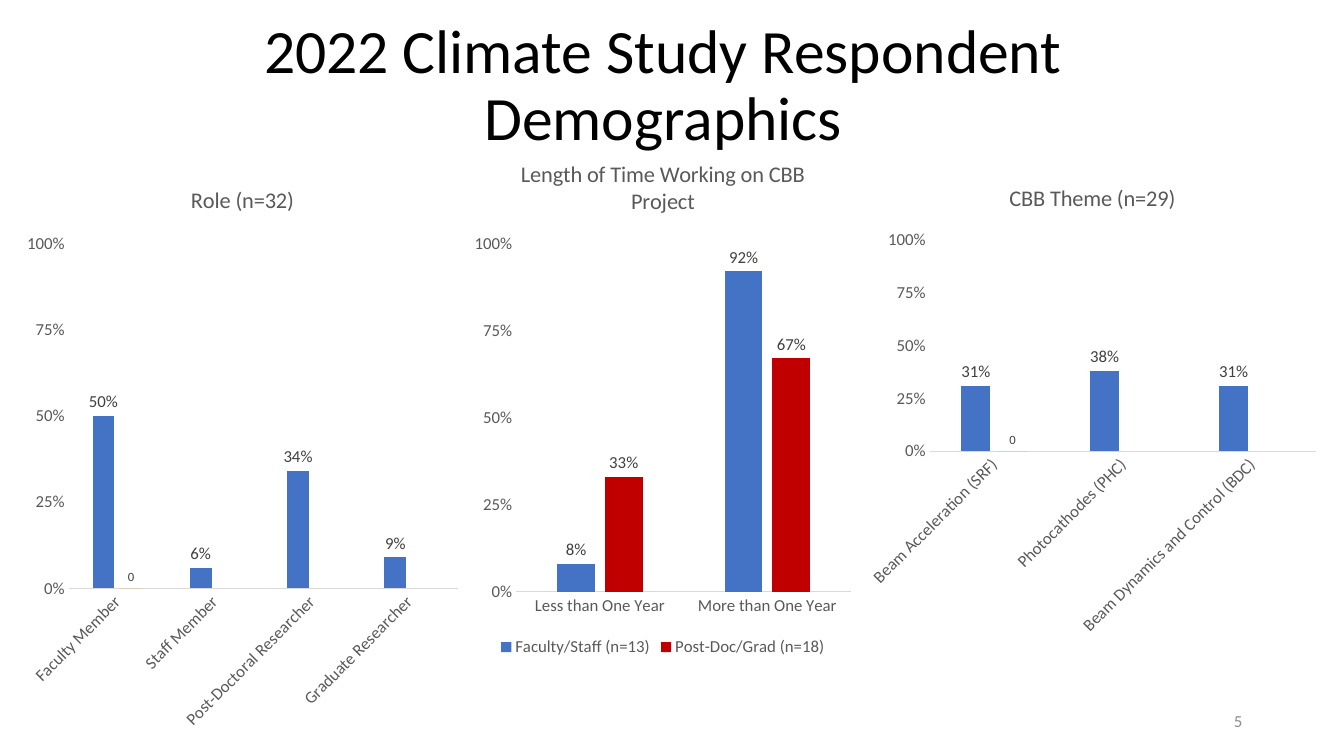
import pptx
import pptx.chart.data
import pptx.dml.color
import pptx.enum.chart
import pptx.enum.text
import pptx.util
from pptx.util import Inches

RGBColor = pptx.dml.color.RGBColor
BLACK = RGBColor(0x00, 0x00, 0x00)
DARK_GRAY = RGBColor(0x40, 0x40, 0x40)
GRAY = RGBColor(0x59, 0x59, 0x59)
NUMBER_GRAY = RGBColor(0x8C, 0x8C, 0x8C)
LINE_GRAY = RGBColor(0xD9, 0xD9, 0xD9)
BLUE = RGBColor(0x44, 0x72, 0xC4)
ORANGE = RGBColor(0xED, 0x7D, 0x31)
RED = RGBColor(0xC0, 0x00, 0x00)

ALIGN = pptx.enum.text.PP_ALIGN
CHART = pptx.enum.chart


def format_font(font, size, color):
    values = {"name": "Calibri", "size": pptx.util.Pt(size), "bold": False}
    for attribute, value in values.items():
        setattr(font, attribute, value)
    font.color.rgb = color


presentation = pptx.Presentation()
presentation.slide_width = Inches(13.33)
presentation.slide_height = Inches(7.5)
slide = presentation.slides.add_slide(presentation.slide_layouts[6])

# Title and slide number
texts = [
    ("2022 Climate Study Respondent Demographics",
     (0.83, 0.14, 11.5, 1.45), ALIGN.CENTER, 0.9, 44, BLACK),
    ("5", (9.42, 6.95, 3, 0.4), ALIGN.RIGHT, 1.0, 12, NUMBER_GRAY),
]
for text, place, alignment, spacing, size, color in texts:
    shape = slide.shapes.add_textbox(*map(Inches, place))
    shape.text_frame.word_wrap = True
    shape.text_frame.vertical_anchor = pptx.enum.text.MSO_ANCHOR.MIDDLE
    paragraph = shape.text_frame.paragraphs[0]
    paragraph.text = text
    paragraph.alignment = alignment
    paragraph.line_spacing = spacing
    format_font(paragraph.runs[0].font, size, color)

# Chart contents; each series has name, values, colour, label size, label format
charts = [
    {"title": "Role (n=32)", "place": (0.18, 1.63, 4.45, 5.72),
     "categories": ["Faculty Member", "Staff Member",
                    "Post-Doctoral Researcher", "Graduate Researcher"],
     "series": [("Series 1", [0.5, 0.06, 0.34, 0.09], BLUE, 12, "0%"),
                ("Series 2", [0, None, None, None], ORANGE, 9, "General")],
     "slanted": True, "legend": False},
    {"title": "CBB Theme (n=29)", "place": (8.52, 1.63, 4.63, 4.77),
     "categories": ["Beam Acceleration (SRF)", "Photocathodes (PHC)",
                    "Beam Dynamics and Control (BDC)"],
     "series": [("Series 1", [0.31, 0.38, 0.31], BLUE, 12, "0%"),
                ("Series 2", [0, None, None], ORANGE, 9, "General")],
     "slanted": True, "legend": False},
    {"title": "Length of Time Working on CBB Project",
     "place": (4.63, 1.38, 3.89, 5.18),
     "categories": ["Less than One Year", "More than One Year"],
     "series": [("Faculty/Staff (n=13)", [0.08, 0.92], BLUE, 12, "0%"),
                ("Post-Doc/Grad (n=18)", [0.33, 0.67], RED, 12, "0%")],
     "slanted": False, "legend": True},
]

for content in charts:
    data = pptx.chart.data.CategoryChartData()
    data.categories = content["categories"]
    for name, values, color, size, number_format in content["series"]:
        data.add_series(name, values, number_format)
    chart = slide.shapes.add_chart(
        CHART.XL_CHART_TYPE.COLUMN_CLUSTERED,
        *map(Inches, content["place"]), data).chart
    format_font(chart.font, 10, BLACK)

    # Chart title and legend
    chart.has_title = True
    chart.chart_title.include_in_layout = False
    title = chart.chart_title.text_frame.paragraphs[0]
    title.text = content["title"]
    format_font(title.runs[0].font, 16, GRAY)
    chart.has_legend = content["legend"]
    if chart.has_legend:
        chart.legend.position = CHART.XL_LEGEND_POSITION.BOTTOM
        chart.legend.include_in_layout = False
        format_font(chart.legend.font, 12, GRAY)

    # Axes
    for axis in (chart.category_axis, chart.value_axis):
        axis.has_major_gridlines = False
        axis.major_tick_mark = CHART.XL_TICK_MARK.NONE
        axis.minor_tick_mark = CHART.XL_TICK_MARK.NONE
        format_font(axis.tick_labels.font, 12, GRAY)
    chart.category_axis.format.line.color.rgb = LINE_GRAY
    chart.category_axis.format.line.width = pptx.util.Pt(0.75)
    if content["slanted"]:
        label_text = chart.category_axis._element.txPr
        label_text.bodyPr.set("rot", str(-45 * 60000))
    scale = {"minimum_scale": 0, "maximum_scale": 1, "major_unit": 0.25}
    for attribute, value in scale.items():
        setattr(chart.value_axis, attribute, value)
    chart.value_axis.format.line.fill.background()
    chart.value_axis.tick_labels.number_format = "0%"
    chart.value_axis.tick_labels.number_format_is_linked = False

    # Columns and their labels
    plot = chart.plots[0]
    plot.gap_width = 219
    plot.overlap = -27
    plot.vary_by_categories = False
    for series, (_, _, color, size, number_format) in zip(plot.series, content["series"]):
        series.format.fill.solid()
        series.format.fill.fore_color.rgb = color
        series.invert_if_negative = False
        labels = series.data_labels
        labels.show_value = True
        labels.position = CHART.XL_LABEL_POSITION.OUTSIDE_END
        labels.number_format = number_format
        labels.number_format_is_linked = False
        format_font(labels.font, size, DARK_GRAY)

presentation.save("out.pptx")
